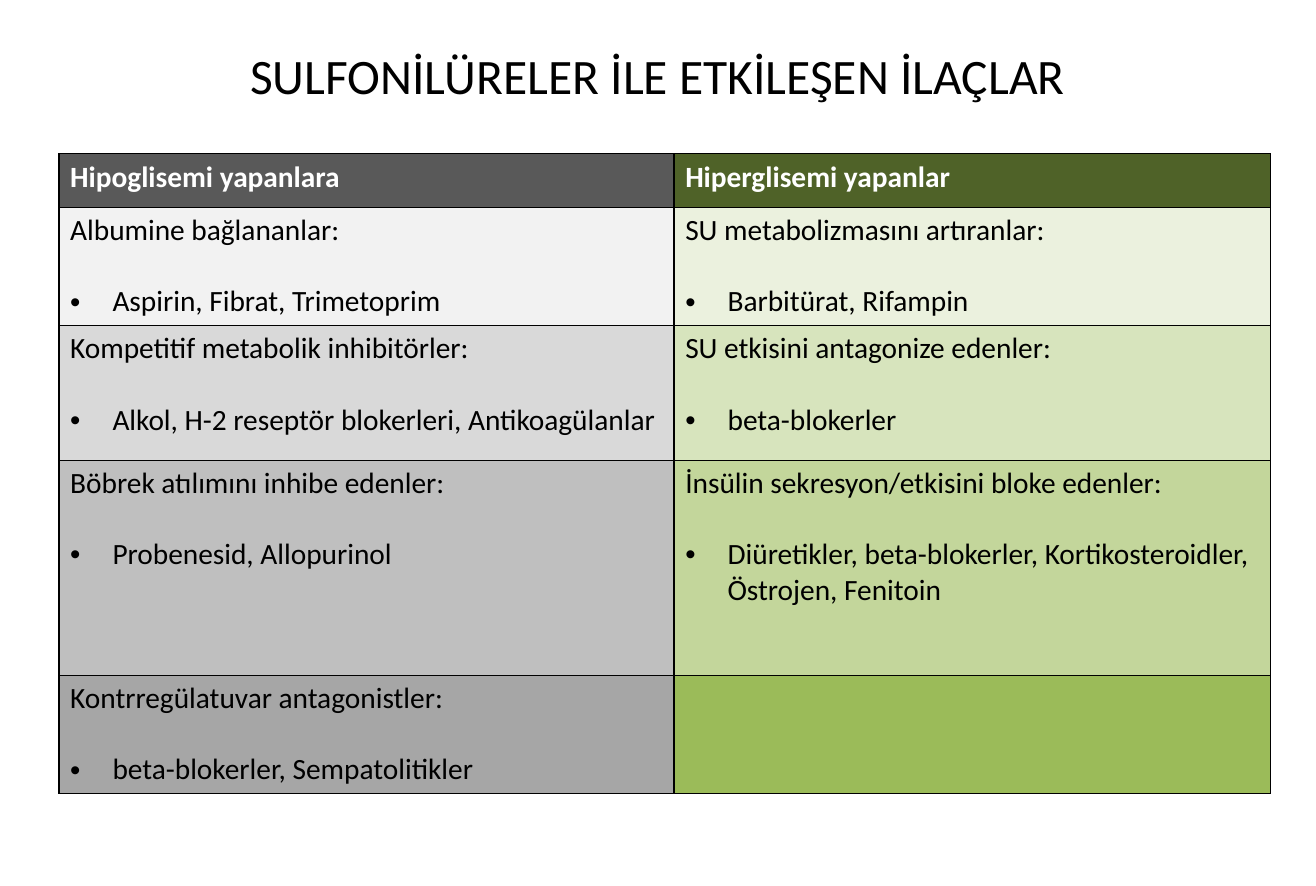
from pptx import Presentation
from pptx.dml.color import RGBColor as RGB
from pptx.enum.text import PP_ALIGN as Align
from pptx.oxml.ns import qn
from pptx.util import Inches, Pt
from lxml.etree import SubElement as Sub


def tint(code):
    return RGB.from_string(code)


class Deck:
    """Holds the text style and the current slide."""

    font, ink, size = "Calibri", "000000", 19

    def __init__(self, wide, high):
        self.prs = Presentation()
        self.prs.slide_width, self.prs.slide_height = Inches(wide), Inches(high)
        self.slide = self.prs.slides.add_slide(self.prs.slide_layouts[6])

    def run(self, para, text, size=size, color=ink, bold=False):
        run = para.add_run()
        run.text = text
        font = run.font
        font.name, font.size, font.bold = self.font, Pt(size), bold
        font.color.rgb = tint(color)

    def title(self, text, x, y, w, h):
        box = self.slide.shapes.add_textbox(*map(Inches, (x, y, w, h)))
        frame = box.text_frame
        frame.word_wrap = True
        frame.margin_top = Inches(0.08)
        para = frame.paragraphs[0]
        para.alignment = Align.CENTER
        self.run(para, text, 32)

    def bullet(self, para, text):
        props = para._p.get_or_add_pPr()
        props.set("marL", str(Inches(0.38)))
        props.set("indent", str(-Inches(0.38)))
        Sub(props, qn("a:buFont"), typeface="Arial")
        Sub(props, qn("a:buChar"), char="•")
        para.space_before = Pt(23)
        self.run(para, text)

    def border(self, cell):
        props = cell._tc.get_or_add_tcPr()
        for side in ("lnL", "lnR", "lnT", "lnB"):
            line = Sub(props, qn(f"a:{side}"), w=str(Pt(1)))
            fill = Sub(line, qn("a:solidFill"))
            Sub(fill, qn("a:srgbClr"), val=self.ink)

    def cell(self, cell, texts, fill, head):
        self.border(cell)
        cell.fill.solid()
        cell.fill.fore_color.rgb = tint(fill)
        frame = cell.text_frame
        for num, text in enumerate(texts):
            if num:
                self.bullet(frame.add_paragraph(), text)
            else:
                color = "FFFFFF" if head else self.ink
                self.run(frame.paragraphs[0], text, color=color, bold=head)

    def table(self, rows, fills, x, y, wides, highs):
        area = map(Inches, (x, y, sum(wides), sum(highs)))
        table = self.slide.shapes.add_table(len(highs), len(wides), *area).table
        for col, wide in zip(table.columns, wides):
            col.width = Inches(wide)
        for row, high in zip(table.rows, highs):
            row.height = Inches(high)
        for r, (row, tones) in enumerate(zip(rows, fills)):
            for c, (texts, fill) in enumerate(zip(row, tones)):
                self.cell(table.cell(r, c), texts, fill, r == 0)


ROWS = [
    (["Hipoglisemi yapanlara"], ["Hiperglisemi yapanlar"]),
    (["Albumine bağlananlar:", "Aspirin, Fibrat, Trimetoprim"],
     ["SU metabolizmasını artıranlar:", "Barbitürat, Rifampin"]),
    (["Kompetitif metabolik inhibitörler:",
      "Alkol, H-2 reseptör blokerleri, Antikoagülanlar"],
     ["SU etkisini antagonize edenler:", "beta-blokerler"]),
    (["Böbrek atılımını inhibe edenler:", "Probenesid, Allopurinol"],
     ["İnsülin sekresyon/etkisini bloke edenler:",
      "Diüretikler, beta-blokerler, Kortikosteroidler, Östrojen, Fenitoin"]),
    (["Kontrregülatuvar antagonistler:", "beta-blokerler, Sempatolitikler"],
     []),
]
FILLS = [
    ("595959", "4F6228"),
    ("F2F2F2", "EBF1DE"),
    ("D9D9D9", "D7E4BD"),
    ("BFBFBF", "C3D69B"),
    ("A6A6A6", "9BBB59"),
]


def main():
    deck = Deck(11.81, 7.95)
    deck.table(ROWS, FILLS, 0.53, 1.38, (5.52, 5.35),
               (0.48, 1.06, 1.21, 1.93, 1.06))
    deck.title("SULFONİLÜRELER İLE ETKİLEŞEN İLAÇLAR", 0.59, 0.32, 10.63, 1.33)
    deck.prs.save("out.pptx")


if __name__ == "__main__":
    main()
